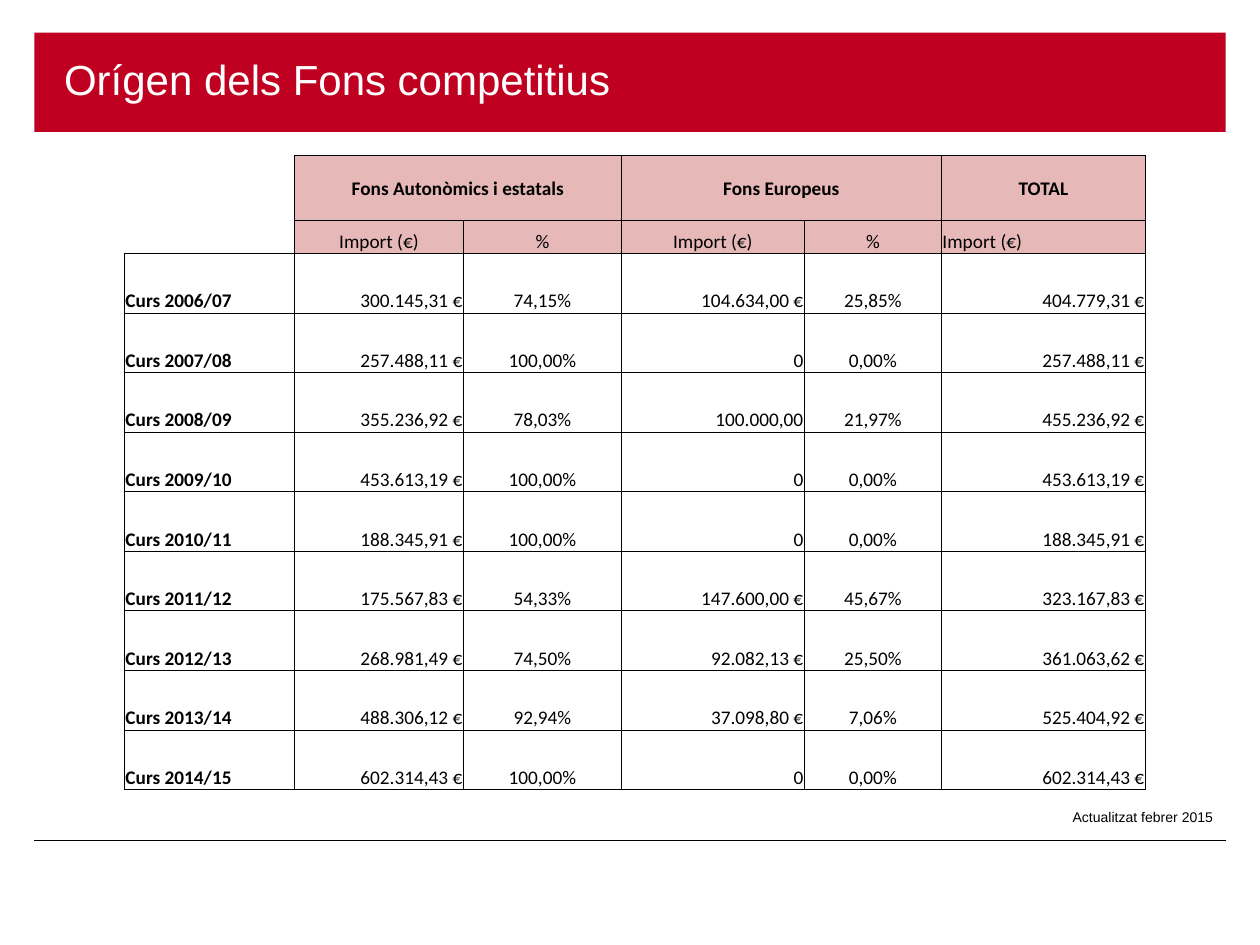
import lxml.etree
import pptx
import pptx.dml.color
import pptx.enum.shapes
import pptx.enum.text
import pptx.oxml.ns
import pptx.util

Pt = pptx.util.Pt
qn = pptx.oxml.ns.qn
ALIGN = pptx.enum.text.PP_ALIGN
ANCHOR = pptx.enum.text.MSO_ANCHOR
COLOURS = {"red": "C00021", "pink": "E6B8B7", "white": "FFFFFF", "black": "000000"}


def rgb(name):
    return pptx.dml.color.RGBColor.from_string(COLOURS[name])


def write(paragraph, text, align, colour="black", **font):
    paragraph.alignment = align
    run = paragraph.add_run()
    run.text = text
    run.font.color.rgb = rgb(colour)
    for attribute, value in font.items():
        setattr(run.font, attribute, value)


deck = pptx.Presentation()
deck.slide_width, deck.slide_height = Pt(720), Pt(540)
slide = deck.slides.add_slide(deck.slide_layouts[6])

footer_rule = slide.shapes.add_connector(
    pptx.enum.shapes.MSO_CONNECTOR.STRAIGHT, Pt(19.6), Pt(480), Pt(700.4), Pt(480))
footer_rule.line.color.rgb = rgb("black")
footer_rule.line.width = Pt(0.5)
lxml.etree.SubElement(footer_rule._element.spPr, qn("a:effectLst"))

banner = slide.shapes.add_shape(
    pptx.enum.shapes.MSO_SHAPE.RECTANGLE, Pt(19.6), Pt(18.7), Pt(680.8), Pt(56.7))
banner.shadow.inherit = False
banner.fill.solid()
banner.fill.fore_color.rgb = rgb("red")
banner.line.fill.background()
heading = banner.text_frame
heading.vertical_anchor = ANCHOR.MIDDLE
heading.margin_left = Pt(17)
heading.paragraphs[0].line_spacing = 0.9
write(heading.paragraphs[0], "Orígen dels Fons competitius", ALIGN.LEFT, "white",
      size=Pt(24), name="Arial")

update_note = slide.shapes.add_textbox(Pt(598.2), Pt(458.4), Pt(102.2), Pt(17)).text_frame
update_note.word_wrap = True
write(update_note.paragraphs[0], "Actualitzat febrer 2015", ALIGN.RIGHT,
      size=Pt(8), name="Arial")

rows = [
    ["", "Fons Autonòmics i estatals", "", "Fons Europeus", "", "TOTAL"],
    ["", "Import (€)", "%", "Import (€)", "%", "Import (€)"],
    ["Curs 2006/07", "300.145,31 €", "74,15%", "104.634,00 €", "25,85%", "404.779,31 €"],
    ["Curs 2007/08", "257.488,11 €", "100,00%", "0", "0,00%", "257.488,11 €"],
    ["Curs 2008/09", "355.236,92 €", "78,03%", "100.000,00", "21,97%", "455.236,92 €"],
    ["Curs 2009/10", "453.613,19 €", "100,00%", "0", "0,00%", "453.613,19 €"],
    ["Curs 2010/11", "188.345,91 €", "100,00%", "0", "0,00%", "188.345,91 €"],
    ["Curs 2011/12", "175.567,83 €", "54,33%", "147.600,00 €", "45,67%", "323.167,83 €"],
    ["Curs 2012/13", "268.981,49 €", "74,50%", "92.082,13 €", "25,50%", "361.063,62 €"],
    ["Curs 2013/14", "488.306,12 €", "92,94%", "37.098,80 €", "7,06%", "525.404,92 €"],
    ["Curs 2014/15", "602.314,43 €", "100,00%", "0", "0,00%", "602.314,43 €"],
]
column_widths = [97.2, 96.6, 90.2, 104.6, 78.3, 116.6]
row_heights = [37.2, 18.8] + [34.05] * 9
column_aligns = [ALIGN.LEFT, ALIGN.RIGHT, ALIGN.CENTER, ALIGN.RIGHT, ALIGN.CENTER, ALIGN.RIGHT]
cell_margins = {"margin_left": 0.6, "margin_right": 0.6, "margin_top": 0.6, "margin_bottom": 0}
corner_borders = {0: ["R"], 1: ["R", "B"]}

funds = slide.shapes.add_table(len(rows), len(column_widths), Pt(71.1), Pt(88.8),
                               Pt(sum(column_widths)), Pt(sum(row_heights))).table
funds.first_row = funds.horz_banding = False
for column, width in zip(funds.columns, column_widths):
    column.width = Pt(width)
for row, height in zip(funds.rows, row_heights):
    row.height = Pt(height)
for first in (1, 3):
    funds.cell(0, first).merge(funds.cell(0, first + 1))

for r, values in enumerate(rows):
    for c, value in enumerate(values):
        cell = funds.cell(r, c)
        for side, margin in cell_margins.items():
            setattr(cell, side, Pt(margin))
        cell.vertical_anchor = ANCHOR.MIDDLE if r == 0 else ANCHOR.BOTTOM

        drawn_sides = corner_borders.get(r, "LRTB") if c == 0 else "LRTB"
        for side in "LRTB":
            border = lxml.etree.SubElement(cell._tc.get_or_add_tcPr(), qn("a:ln" + side))
            if side in drawn_sides:
                border.set("w", str(Pt(0.5)))
                line_fill = lxml.etree.SubElement(border, qn("a:solidFill"))
                lxml.etree.SubElement(line_fill, qn("a:srgbClr"), val=COLOURS["black"])
            else:
                lxml.etree.SubElement(border, qn("a:noFill"))

        header = r < 2 and c > 0
        if header or c == 1:
            cell.fill.solid()
            cell.fill.fore_color.rgb = rgb("pink" if header else "white")
        else:
            cell.fill.background()

        paragraph = cell.text_frame.paragraphs[0]
        if value:
            align = column_aligns[c]
            if header:
                align = ALIGN.LEFT if (r, c) == (1, 5) else ALIGN.CENTER
            write(paragraph, value, align, size=Pt(11), name="Calibri", bold=r == 0 or c == 0)
        else:
            # An empty cell takes its text height from the end-of-paragraph mark
            lxml.etree.SubElement(paragraph._p, qn("a:endParaRPr"), sz="1100")

deck.save("out.pptx")
